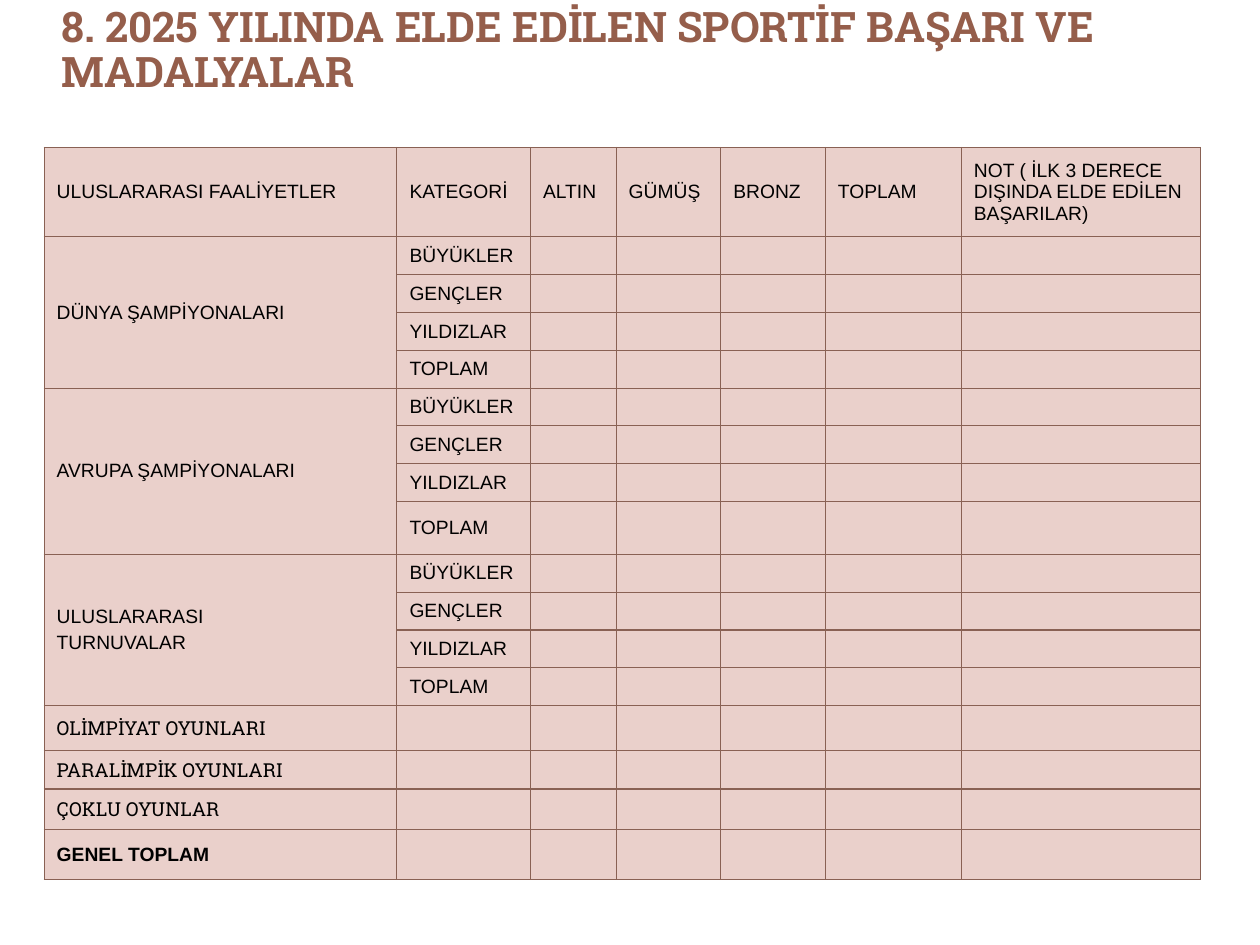
from lxml.etree import SubElement
from pptx import Presentation
from pptx.dml.color import RGBColor
from pptx.enum.text import MSO_ANCHOR, MSO_AUTO_SIZE, PP_ALIGN
from pptx.oxml.ns import qn
from pptx.util import Inches, Pt

TITLE = "8. 2025 YILINDA ELDE EDİLEN SPORTİF BAŞARI VE MADALYALAR"
HEADERS = ["ULUSLARARASI FAALİYETLER", "KATEGORİ", "ALTIN", "GÜMÜŞ", "BRONZ", "TOPLAM",
           "NOT ( İLK 3 DERECE DIŞINDA ELDE EDİLEN BAŞARILAR)"]
EVENTS = ["DÜNYA ŞAMPİYONALARI", "AVRUPA ŞAMPİYONALARI", "ULUSLARARASI\nTURNUVALAR"]
CATEGORIES = ["BÜYÜKLER", "GENÇLER", "YILDIZLAR", "TOPLAM"]
GAMES = ["OLİMPİYAT OYUNLARI", "PARALİMPİK OYUNLARI", "ÇOKLU OYUNLAR"]
TOTAL = "GENEL TOPLAM"
COLS = [2.8, 1.06, 0.68, 0.83, 0.83, 1.08, 1.9]
ROWS = [0.71] + [0.3] * 7 + [0.42] + [0.3] * 4 + [0.36, 0.3, 0.32, 0.4]


def rgb(value):
    return RGBColor.from_string(value)


class Deck:
    body_font = "Arial"
    slab_font = "Roboto Slab"
    title_color = "955E4B"
    text_color = "000000"
    cell_fill = "EAD0CB"
    border = "896154"
    title_size = 24
    cell_size = 11

    def __init__(self, prs):
        self.s = prs.slides.add_slide(prs.slide_layouts[5])

    def run(self, p, text, font, size, color, bold=False):
        r = p.add_run()
        r.text = text
        r.font.name = font
        r.font.size = Pt(size)
        r.font.bold = bold
        r.font.color.rgb = rgb(color)

    def title(self, text, left, top, width, height):
        sp = self.s.shapes.title
        sp.left, sp.top, sp.width, sp.height = map(Inches, (left, top, width, height))
        tf = sp.text_frame
        tf.word_wrap = True
        tf.auto_size = MSO_AUTO_SIZE.NONE
        tf.vertical_anchor = MSO_ANCHOR.TOP
        p = tf.paragraphs[0]
        p.alignment = PP_ALIGN.LEFT
        p.line_spacing = 0.9
        self.run(p, text, self.slab_font, self.title_size, self.title_color, True)

    def table(self, left, top, cols, rows):
        frame = self.s.shapes.add_table(len(rows), len(cols), Inches(left), Inches(top),
                                        Inches(sum(cols)), Inches(sum(rows)))
        tbl = frame.table
        tbl.first_row = tbl.horz_banding = False
        for col, width in zip(tbl.columns, cols):
            col.width = Inches(width)
        for row, height in zip(tbl.rows, rows):
            row.height = Inches(height)
            for cell in row.cells:
                self.style_cell(cell)
        return tbl

    def style_cell(self, cell):
        cell.vertical_anchor = MSO_ANCHOR.MIDDLE
        tcPr = cell._tc.get_or_add_tcPr()
        for side in ("a:lnL", "a:lnR", "a:lnT", "a:lnB"):
            ln = SubElement(tcPr, qn(side), w=str(Pt(0.75)))
            fill = SubElement(ln, qn("a:solidFill"))
            SubElement(fill, qn("a:srgbClr"), val=self.border)
        cell.fill.solid()
        cell.fill.fore_color.rgb = rgb(self.cell_fill)
        p = cell.text_frame.paragraphs[0]
        SubElement(p._p, qn("a:endParaRPr"), sz=str(self.cell_size * 100))

    def cell_text(self, cell, text, font=body_font, bold=False):
        tf = cell.text_frame
        for i, line in enumerate(text.split("\n")):
            p = tf.add_paragraph() if i else tf.paragraphs[0]
            p.space_before = Pt(self.cell_size * 0.2)
            self.run(p, line, font, self.cell_size, self.text_color, bold)


def main():
    prs = Presentation()
    prs.slide_width, prs.slide_height = Inches(10), Inches(7.5)
    deck = Deck(prs)
    deck.title(TITLE, 0.39, 0, 8.91, 0.48)
    tbl = deck.table(0.35, 1.17, COLS, ROWS)

    for c, header in enumerate(HEADERS):
        deck.cell_text(tbl.cell(0, c), header)
    row = 1
    for event in EVENTS:
        last = row + len(CATEGORIES) - 1
        tbl.cell(row, 0).merge(tbl.cell(last, 0))
        deck.cell_text(tbl.cell(row, 0), event)
        for category in CATEGORIES:
            deck.cell_text(tbl.cell(row, 1), category)
            row += 1
    for game in GAMES:
        deck.cell_text(tbl.cell(row, 0), game, deck.slab_font)
        row += 1
    deck.cell_text(tbl.cell(row, 0), TOTAL, bold=True)

    prs.save("out.pptx")


if __name__ == "__main__":
    main()
